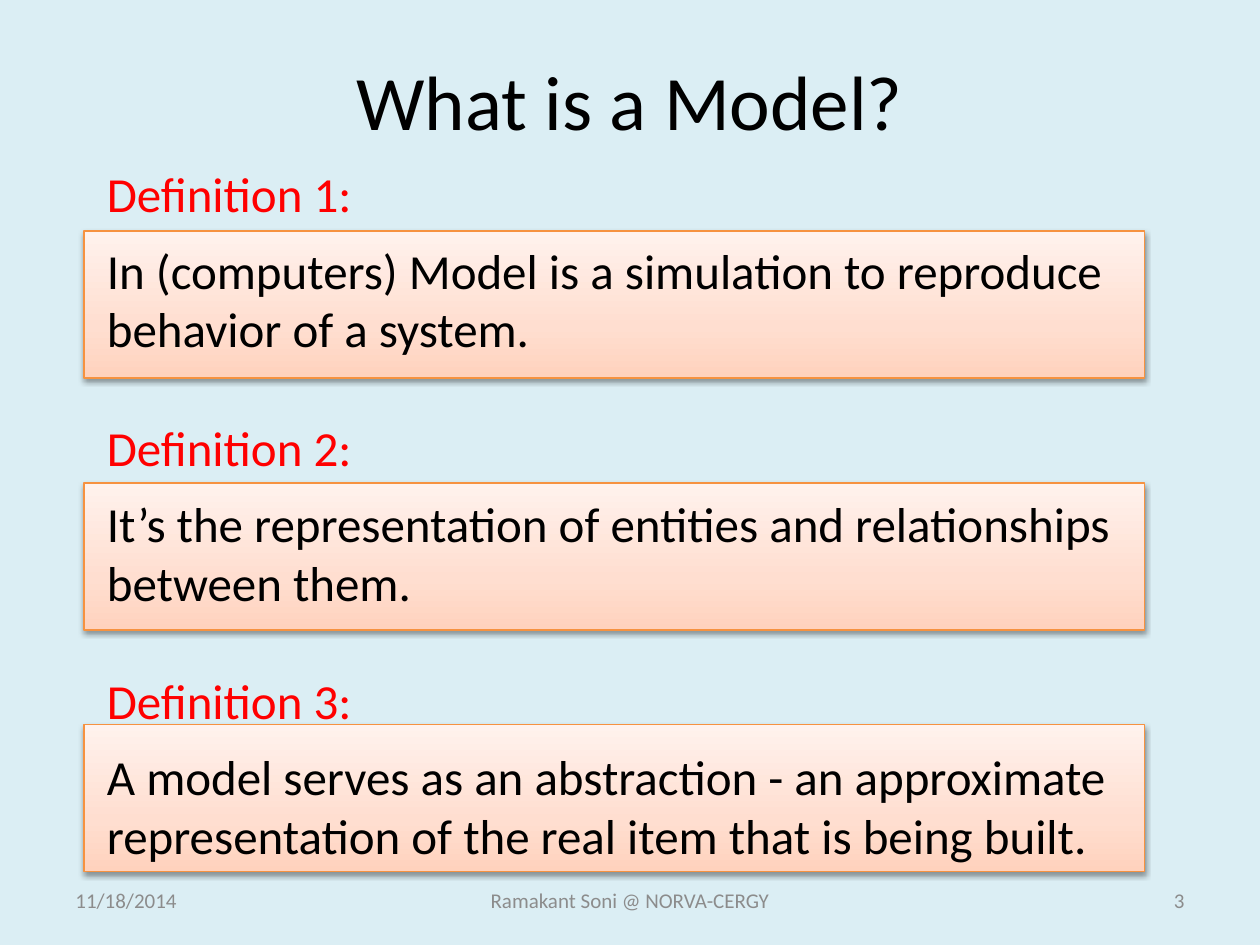
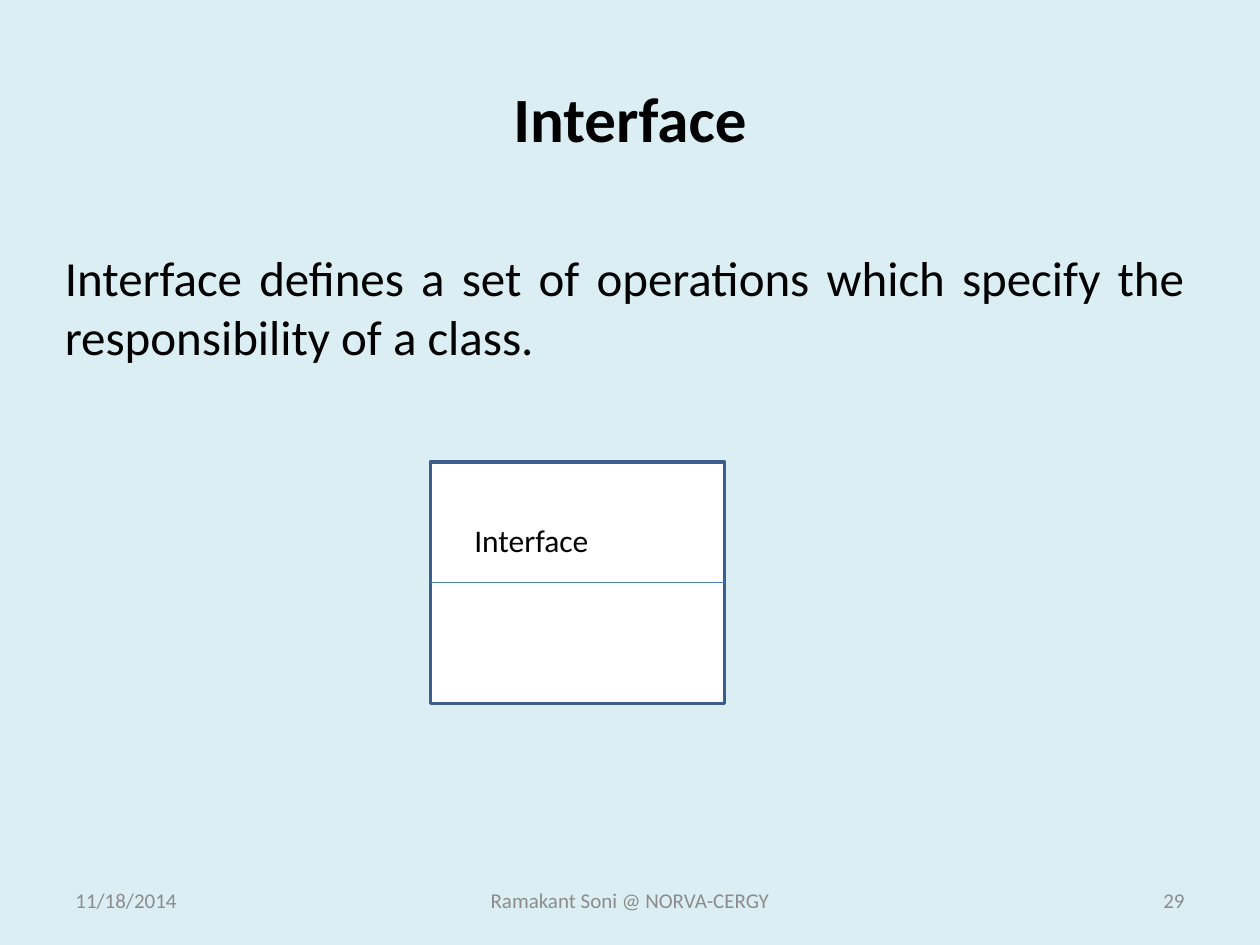
from copy import deepcopy

from lxml import etree
from pptx import Presentation
from pptx.dml.color import RGBColor
from pptx.enum.shapes import MSO_CONNECTOR, MSO_SHAPE
from pptx.enum.text import MSO_ANCHOR, PP_ALIGN
from pptx.oxml.ns import qn
from pptx.util import Emu, Pt

EMU_PER_PX = 9525  # 96 px to the inch
SLIDE_SIZE = (960, 720)
FONT = "Calibri"
COLORS = {
    "background": "DBEEF4",
    "text": "000000",
    "term": "FF0000",
    "footer": "8C8C8C",
    "panel_line": "F69240",
    "shadow": "000000",
    "class_fill": "FFFFFF",
    "class_line": "3A5F8C",
    "divider": "4B7EBC",
}
PANEL_GRADIENT = [(0, "FFD2BD"), (0.35, "FFDED0"), (1, "FFF2ED")]

LEFT, CENTER, RIGHT = PP_ALIGN.LEFT, PP_ALIGN.CENTER, PP_ALIGN.RIGHT
JUSTIFY = PP_ALIGN.JUSTIFY
TOP, MIDDLE = MSO_ANCHOR.TOP, MSO_ANCHOR.MIDDLE
RECTANGLE = MSO_SHAPE.RECTANGLE
STRAIGHT = MSO_CONNECTOR.STRAIGHT
LEFT_SIDE, RIGHT_SIDE = 1, 3

DATE = "11/18/2014"
AUTHOR = "Ramakant Soni @ NORVA-CERGY"
DEFINITIONS = [
    "In (computers) Model is a simulation to reproduce behavior of a system.",
    "It’s the representation of entities and relationships between them.",
    "A model serves as an abstraction - an approximate representation "
    "of the real item that is being built.",
]
PANEL_TOPS = [176, 368, 552]


def px(*lengths):
    return [Emu(length * EMU_PER_PX) for length in lengths]


def rgb(name):
    return RGBColor.from_string(COLORS[name])


# Text
def add_frame(slide, box, anchor=TOP):
    frame = slide.shapes.add_textbox(*px(*box)).text_frame
    frame.word_wrap = True
    frame.vertical_anchor = anchor
    return frame


def write(paragraph, text, size, color="text", align=LEFT, bold=False, before=0):
    paragraph.alignment = align
    paragraph.space_before = Pt(before)
    run = paragraph.add_run()
    run.text = text
    run.font.name = FONT
    run.font.size = Pt(size)
    run.font.bold = bold
    run.font.color.rgb = rgb(color)


def add_text(slide, box, text, size, anchor=TOP, **style):
    write(add_frame(slide, box, anchor).paragraphs[0], text, size, **style)


# Parts that the slides share
def add_slide(prs):
    slide = prs.slides.add_slide(prs.slide_layouts[6])
    slide.background.fill.solid()
    slide.background.fill.fore_color.rgb = rgb("background")
    return slide


def add_title(slide, text, top, size, bold=False):
    add_text(slide, (48, top, 864, 120), text, size, MIDDLE,
             align=CENTER, bold=bold)


def add_footer(slide, number):
    for left, width, text, align in [
        (48, 224, DATE, LEFT),
        (328, 304, AUTHOR, CENTER),
        (688, 224, str(number), RIGHT),
    ]:
        add_text(slide, (left, 667, width, 38), text, 12, MIDDLE,
                 color="footer", align=align)


# Boxes
def add_box(slide, box, line_color, line_width):
    shape = slide.shapes.add_shape(RECTANGLE, *px(*box))
    shape.shadow.inherit = False
    shape.line.color.rgb = rgb(line_color)
    shape.line.width = Pt(line_width)
    return shape


def add_drop_shadow(shape):
    effects = shape._element.spPr.find(qn("a:effectLst"))
    shadow = etree.SubElement(
        effects, qn("a:outerShdw"), blurRad=str(Pt(3.1)), dist=str(Pt(1.6)),
        dir="5400000", rotWithShape="0")
    color = etree.SubElement(shadow, qn("a:srgbClr"), val=COLORS["shadow"])
    etree.SubElement(color, qn("a:alpha"), val="38000")


def add_panel(slide, top):
    panel = add_box(slide, (64, top, 808, 112), "panel_line", 0.75)
    panel.fill.gradient()
    panel.fill.gradient_angle = 90
    stop_list = panel._element.spPr.find(qn("a:gradFill")).find(qn("a:gsLst"))
    stop_list.append(deepcopy(stop_list[-1]))  # the preset has two stops
    for stop, (position, color) in zip(panel.fill.gradient_stops, PANEL_GRADIENT):
        stop.position = position
        stop.color.rgb = RGBColor.from_string(color)
    add_drop_shadow(panel)


def add_divider(slide, box):
    divider = slide.shapes.add_connector(STRAIGHT, 0, 0, 0, 0)
    divider.begin_connect(box, LEFT_SIDE)
    divider.end_connect(box, RIGHT_SIDE)
    divider.line.color.rgb = rgb("divider")
    divider.line.width = Pt(0.75)
    etree.SubElement(divider._element.spPr, qn("a:effectLst"))


# Slides
def build_model_slide(prs):
    slide = add_slide(prs)
    for top in PANEL_TOPS:
        add_panel(slide, top)
    add_title(slide, "What is a Model?", 16, 44)

    frame = add_frame(slide, (72, 120, 840, 546))
    for number, definition in enumerate(DEFINITIONS, 1):
        first = number == 1
        heading = frame.paragraphs[0] if first else frame.add_paragraph()
        write(heading, f"Definition {number}:", 28, "term",
              before=0 if first else 34)
        write(frame.add_paragraph(), definition, 28, before=10)
    add_footer(slide, 3)


def build_interface_slide(prs):
    slide = add_slide(prs)
    add_title(slide, "Interface", 29, 36, bold=True)
    add_footer(slide, 29)
    add_text(slide, (40, 184, 872, 100),
             "Interface defines a set of operations which specify the "
             "responsibility of a class.", 28, align=JUSTIFY)

    class_box = add_box(slide, (328, 352, 224, 184), "class_line", 2)
    class_box.fill.solid()
    class_box.fill.fore_color.rgb = rgb("class_fill")
    add_divider(slide, class_box)
    add_text(slide, (352, 392, 184, 40), "Interface", 18)


def main():
    prs = Presentation()
    prs.slide_width, prs.slide_height = px(*SLIDE_SIZE)
    build_model_slide(prs)
    build_interface_slide(prs)
    prs.save("out.pptx")


if __name__ == "__main__":
    main()
